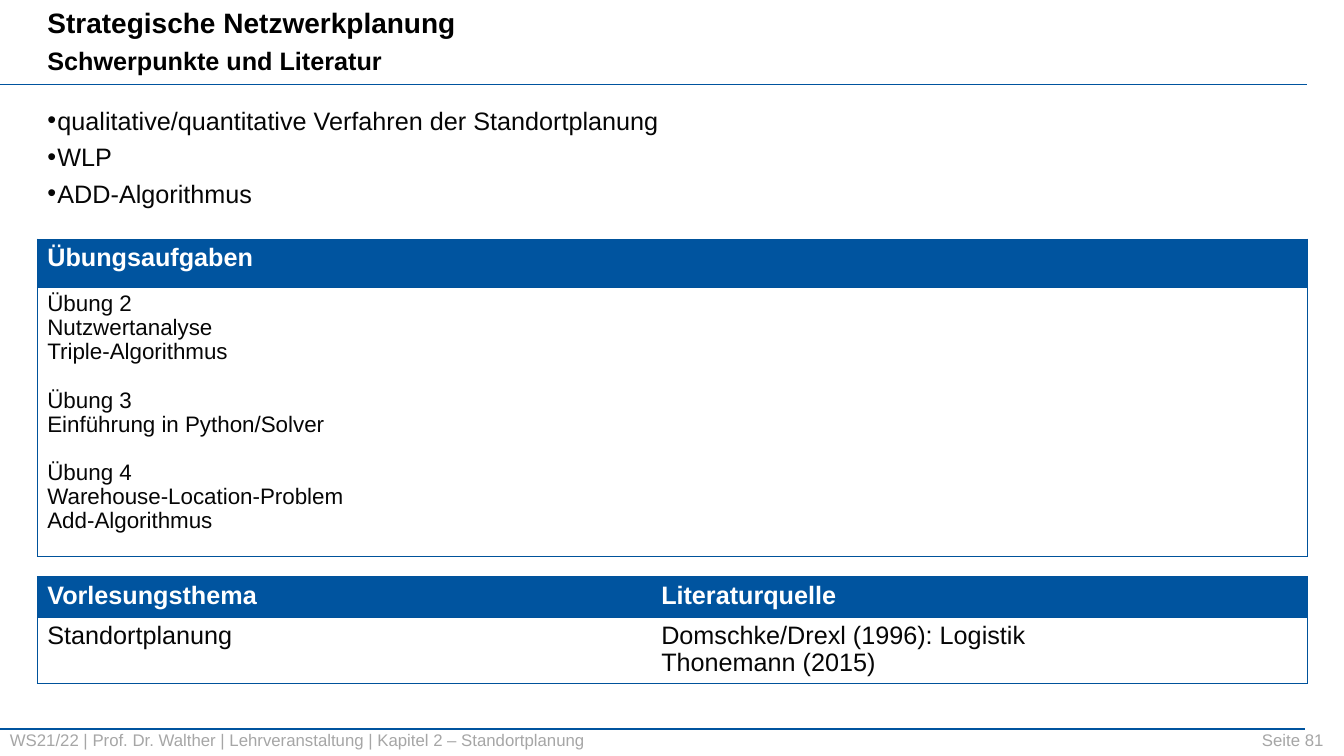
from lxml import etree
from pptx import Presentation
from pptx import util as u
from pptx.dml.color import RGBColor
from pptx.enum import shapes, text
from pptx.oxml.ns import qn

BLUE, BORDER, BODY, GREY = "00549F", "00529B", "060606", "A6A6A6"
PLAIN_TABLE = "{2D5ABB26-0587-4C30-8999-92F81FD0307C}"
LEFT, WIDTH = 26.64, 907.2
SPACE = 4.5


def colour(value):
    return RGBColor.from_string(value)


def place(shape, left, top, width, height):
    shape.left, shape.top = u.Pt(left), u.Pt(top)
    shape.width, shape.height = u.Pt(width), u.Pt(height)


def style(paragraph, size, value, bold=False):
    font = paragraph.font
    font.name, font.size, font.bold = "Arial", u.Pt(size), bold
    font.color.rgb = colour(value)


def fill_lines(frame, lines):
    """Write one paragraph per line and return the paragraphs."""
    frame.text = "\n".join(lines)
    return frame.paragraphs


def add_rule(slide, left, top, width):
    line = slide.shapes.add_connector(
        shapes.MSO_CONNECTOR.STRAIGHT,
        u.Pt(left), u.Pt(top), u.Pt(left + width), u.Pt(top))
    line.line.color.rgb = colour(BLUE)
    line.line.width = u.Pt(1)
    etree.SubElement(line._element.spPr, qn("a:effectLst"))


# Title with subtitle and the rule below
def add_header(slide, left, top, width, height):
    title = slide.shapes.title
    place(title, left, top, width, height)
    frame = title.text_frame
    frame.auto_size = text.MSO_AUTO_SIZE.NONE
    frame.vertical_anchor = text.MSO_ANCHOR.TOP
    heading, subtitle = fill_lines(
        frame, ["Strategische Netzwerkplanung", "Schwerpunkte und Literatur"])
    for paragraph, size in ((heading, 20), (subtitle, 18)):
        paragraph.alignment = text.PP_ALIGN.LEFT
        paragraph.line_spacing = 1.0
        style(paragraph, size, "000000", bold=True)
    subtitle.space_before = u.Pt(SPACE)
    add_rule(slide, 0, top + height + 2.9, left + width + 264)


# Bulleted list of topics
def add_topics(slide, left, top, width, height, topics):
    body = slide.placeholders[1]
    place(body, left, top, width, height)
    body.text_frame.auto_size = text.MSO_AUTO_SIZE.NONE
    for index, paragraph in enumerate(fill_lines(body.text_frame, topics)):
        properties = paragraph._p.get_or_add_pPr()
        properties.set("marL", str(u.Pt(7.2)))
        properties.set("indent", str(-u.Pt(7.2)))
        etree.SubElement(properties, qn("a:buChar"), char="•")
        paragraph.alignment = text.PP_ALIGN.JUSTIFY
        paragraph.line_spacing = 1.0
        paragraph.space_before = u.Pt(SPACE if index else 0)
        style(paragraph, 18, BODY)


def add_borders(cell, edges):
    properties = cell._tc.get_or_add_tcPr()
    for position, edge in enumerate(edges):
        line = etree.Element(qn(f"a:ln{edge}"), w=str(u.Pt(0.75)))
        solid = etree.SubElement(line, qn("a:solidFill"))
        etree.SubElement(solid, qn("a:srgbClr"), val=BORDER)
        properties.insert(position, line)


# Table with a blue heading row and an outer frame
def add_framed_table(slide, left, top, widths, heights, headings, contents, size):
    frame = slide.shapes.add_table(
        2, len(widths), u.Pt(left), u.Pt(top),
        u.Pt(sum(widths)), u.Pt(sum(heights)))
    table = frame.table
    table.first_row = table.horz_banding = False
    table._tbl.tblPr.find(qn("a:tableStyleId")).text = PLAIN_TABLE
    for row, height in zip(table.rows, heights):
        row.height = u.Pt(height)
    last = len(widths) - 1
    for index, width in enumerate(widths):
        table.columns[index].width = u.Pt(width)
        heading, content = table.cell(0, index), table.cell(1, index)
        heading.fill.solid()
        heading.fill.fore_color.rgb = colour(BLUE)
        content.fill.background()
        sides = "L" * (index == 0) + "R" * (index == last)
        add_borders(heading, sides + "T")
        add_borders(content, sides + "TB")
        style(fill_lines(heading.text_frame, [headings[index]])[0],
              18, "FFFFFF", bold=True)
        for paragraph in fill_lines(content.text_frame, contents[index]):
            paragraph.line_spacing = 0.96
            style(paragraph, size, BODY)
    return table


# Exercises, grouped by spacing
def add_exercises(slide, left, top, width):
    groups = [
        ["Übung 2", "Nutzwertanalyse", "Triple-Algorithmus"],
        ["Übung 3", "Einführung in Python/Solver"],
        ["Übung 4", "Warehouse-Location-Problem", "Add-Algorithmus"],
    ]
    table = add_framed_table(
        slide, left, top, [width], [34.8, 192], ["Übungsaufgaben"],
        [sum(groups, [])], 16)
    paragraphs = table.cell(1, 0).text_frame.paragraphs
    start = 0
    for group in groups[:-1]:
        start += len(group)
        paragraphs[start].space_before = u.Pt(17.7)


def add_footer_text(slide, left, top, width, height, words, alignment, inset):
    box = slide.shapes.add_textbox(
        u.Pt(left), u.Pt(top), u.Pt(width), u.Pt(height))
    frame = box.text_frame
    frame.word_wrap = True
    frame.vertical_anchor = text.MSO_ANCHOR.MIDDLE
    frame.margin_left = frame.margin_right = u.Pt(inset)
    frame.margin_top = frame.margin_bottom = u.Pt(inset / 2)
    paragraph = fill_lines(frame, [words])[0]
    paragraph.alignment = alignment
    style(paragraph, 12, GREY)


# Rule, course line and page number
def add_footer(slide, left, top, width):
    add_rule(slide, left - 1.44, top, width)
    add_footer_text(
        slide, left, top - 2.9, 737.3, 21.6,
        "WS21/22 | Prof. Dr. Walther | Lehrveranstaltung | Kapitel 2 – Standortplanung",
        text.PP_ALIGN.LEFT, 7.2)
    add_footer_text(slide, left + 831.6, top + 0.7, 113.8, 14.4,
                    "Seite 81", text.PP_ALIGN.RIGHT, 0)


def main():
    presentation = Presentation()
    presentation.slide_width, presentation.slide_height = u.Pt(960), u.Pt(540)
    slide = presentation.slides.add_slide(presentation.slide_layouts[1])
    add_header(slide, LEFT, 0, 643, 57.6)
    add_topics(slide, LEFT, 71.3, WIDTH, 439.2, [
        "qualitative/quantitative Verfahren der Standortplanung",
        "WLP", "ADD-Algorithmus"])
    add_exercises(slide, LEFT, 170.7, WIDTH)
    add_framed_table(
        slide, LEFT, 411.8, [438.5, WIDTH - 438.5], [29.3, 47.3],
        ["Vorlesungsthema", "Literaturquelle"],
        [["Standortplanung"],
         ["Domschke/Drexl (1996): Logistik", "Thonemann (2015)"]], 18)
    add_footer(slide, 0, 520.6, 933.8)
    presentation.save("out.pptx")


if __name__ == "__main__":
    main()
